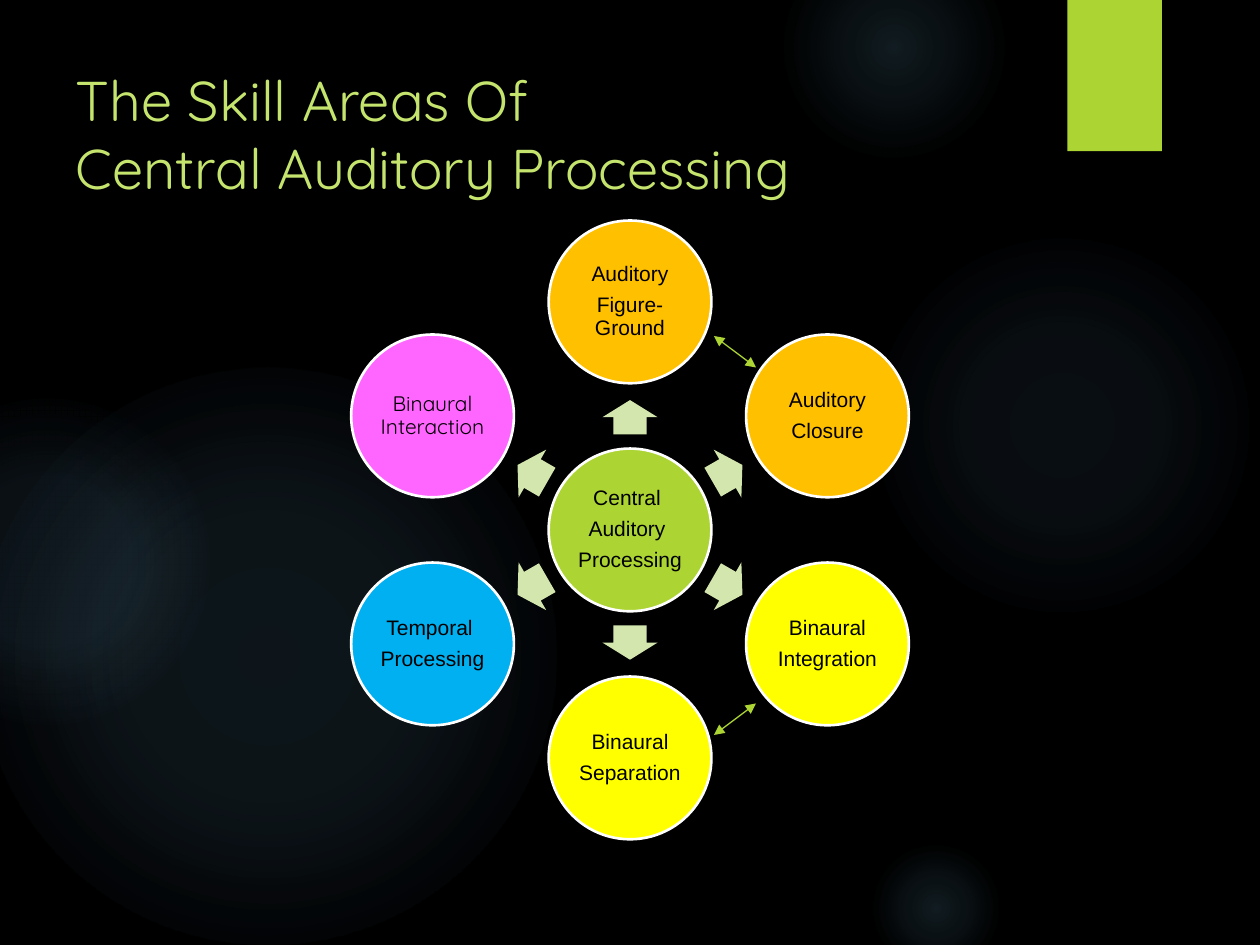
import math

from pptx import Presentation
from pptx.dml.color import RGBColor
from pptx.enum import shapes, text
from pptx.oxml import ns, parse_xml
from pptx.util import Pt

COLORS = {
    "background": "000000", "glow": "7AC4F0", "green": "ACD433",
    "title": "C4E46E", "arrow": "D2E6AE", "orange": "FFC000",
    "yellow": "FFFF00", "blue": "00B0F0", "pink": "FF66FF",
    "white": "FFFFFF", "black": "000000",
}
CENTER_X, CENTER_Y = 360, 302.8
CIRCLE_SIZE = 93
CIRCLE_ORBIT, ARROW_ORBIT = 130.3, 64.4

# left, top, diameter, then (position %, opacity %) stops
GLOWS = [
    (496, 132, 222, [(0, 7), (36, 6), (69, 0)]),
    (448, -36, 126, [(0, 14), (36, 7), (73, 0)]),
    (496, 480, 78, [(0, 14), (36, 7), (66, 0)]),
    (-12, 210, 330, [(0, 11), (36, 10), (75, 0)]),
    (-66, 228, 186, [(0, 8), (36, 8), (72, 0)]),
]

# Clockwise from the top
SKILLS = [
    (["Auditory", "Figure-Ground"], "orange", "Arial"),
    (["Auditory", "Closure"], "orange", "Arial"),
    (["Binaural", "Integration"], "yellow", "Arial"),
    (["Binaural", "Separation"], "yellow", "Arial"),
    (["Temporal ", "Processing"], "blue", "Arial"),
    (["Binaural Interaction"], "pink", "Quicksand"),
]


def rgb(name):
    return RGBColor.from_string(COLORS[name])


def add_shape(s, kind, x, y, w, h, color):
    sp = s.shapes.add_shape(kind, Pt(x), Pt(y), Pt(w), Pt(h))
    sp.shadow.inherit = False
    sp.fill.solid()
    sp.fill.fore_color.rgb = rgb(color)
    sp.line.fill.background()
    return sp


def add_glow(s, x, y, size, stops):
    sp = add_shape(s, shapes.MSO_SHAPE.OVAL, x, y, size, size, "glow")
    stop_xml = "".join(
        f'<a:gs pos="{pos * 1000}"><a:srgbClr val="{COLORS["glow"]}">'
        f'<a:alpha val="{alpha * 1000}"/></a:srgbClr></a:gs>'
        for pos, alpha in stops)
    gradient = parse_xml(
        f'<a:gradFill {ns.nsdecls("a")} rotWithShape="1"><a:gsLst>{stop_xml}</a:gsLst>'
        '<a:path path="circle"><a:fillToRect l="50000" t="50000" r="50000" b="50000"/>'
        '</a:path></a:gradFill>')
    sp_pr = sp.element.spPr
    sp_pr.replace(sp_pr.find(ns.qn("a:solidFill")), gradient)


def add_title(s, content):
    sp = s.shapes.title
    sp.left, sp.top, sp.width, sp.height = Pt(36), Pt(34), Pt(648), Pt(74)
    tf = sp.text_frame
    tf.text = content
    tf.word_wrap = True
    tf.auto_size = text.MSO_AUTO_SIZE.NONE
    tf.vertical_anchor = text.MSO_ANCHOR.TOP
    p = tf.paragraphs[0]
    p.alignment = text.PP_ALIGN.LEFT
    p.font.name, p.font.size = "Quicksand", Pt(32)
    p.font.color.rgb = rgb("title")


def add_circle(s, cx, cy, lines, color, font):
    sp = add_shape(s, shapes.MSO_SHAPE.OVAL, cx - CIRCLE_SIZE / 2,
                   cy - CIRCLE_SIZE / 2, CIRCLE_SIZE, CIRCLE_SIZE, color)
    sp.line.color.rgb = rgb("white")
    sp.line.width = Pt(1.5)
    tf = sp.text_frame
    tf.word_wrap = True
    tf.vertical_anchor = text.MSO_ANCHOR.MIDDLE
    tf.margin_left = tf.margin_right = tf.margin_top = tf.margin_bottom = Pt(1.2)
    tf.text = "\n".join(lines)
    for p in tf.paragraphs:
        p.alignment = text.PP_ALIGN.CENTER
        p.line_spacing = 0.9
        p.space_after = Pt(4.7)
        p.font.name, p.font.size = font, Pt(12)
        p.font.color.rgb = rgb("black")


def add_arrow(s, cx, cy, angle):
    w, h = 19.6, 31.6
    sp = add_shape(s, shapes.MSO_SHAPE.RIGHT_ARROW, cx - w / 2, cy - h / 2, w, h, "arrow")
    sp.adjustments[0], sp.adjustments[1] = 0.6, 0.5
    sp.rotation = angle % 360


def add_double_arrow(s, x1, y1, x2, y2):
    line = s.shapes.add_connector(shapes.MSO_CONNECTOR.STRAIGHT,
                                  Pt(x1), Pt(y1), Pt(x2), Pt(y2))
    line.line.color.rgb = rgb("green")
    line.line.width = Pt(0.75)
    for end in ("headEnd", "tailEnd"):
        line.line._get_or_add_ln().append(
            parse_xml(f'<a:{end} {ns.nsdecls("a")} type="triangle"/>'))
    line.element.spPr.append(parse_xml(f'<a:effectLst {ns.nsdecls("a")}/>'))


def orbit(angle, radius):
    a = math.radians(angle)
    return CENTER_X + radius * math.cos(a), CENTER_Y + radius * math.sin(a)


def main():
    prs = Presentation()
    prs.slide_width, prs.slide_height = Pt(720), Pt(540)
    s = prs.slides.add_slide(prs.slide_layouts[5])

    # Backdrop
    s.background.fill.solid()
    s.background.fill.fore_color.rgb = rgb("background")
    for glow in GLOWS:
        add_glow(s, *glow)
    add_shape(s, shapes.MSO_SHAPE.RECTANGLE, 610, 0, 54, 86.4, "green")

    add_title(s, "The Skill Areas Of \vCentral Auditory Processing")

    # Hub with six skills around it
    add_circle(s, CENTER_X, CENTER_Y, ["Central ", "Auditory ", "Processing"],
               "green", "Arial")
    for i, (lines, color, font) in enumerate(SKILLS):
        angle = -90 + i * 360 / len(SKILLS)
        add_arrow(s, *orbit(angle, ARROW_ORBIT), angle)
        add_circle(s, *orbit(angle, CIRCLE_ORBIT), lines, color, font)

    # Links between related skills
    add_double_arrow(s, 432, 402, 408, 420)
    add_double_arrow(s, 408, 192, 432, 210)

    prs.save("out.pptx")


if __name__ == "__main__":
    main()
